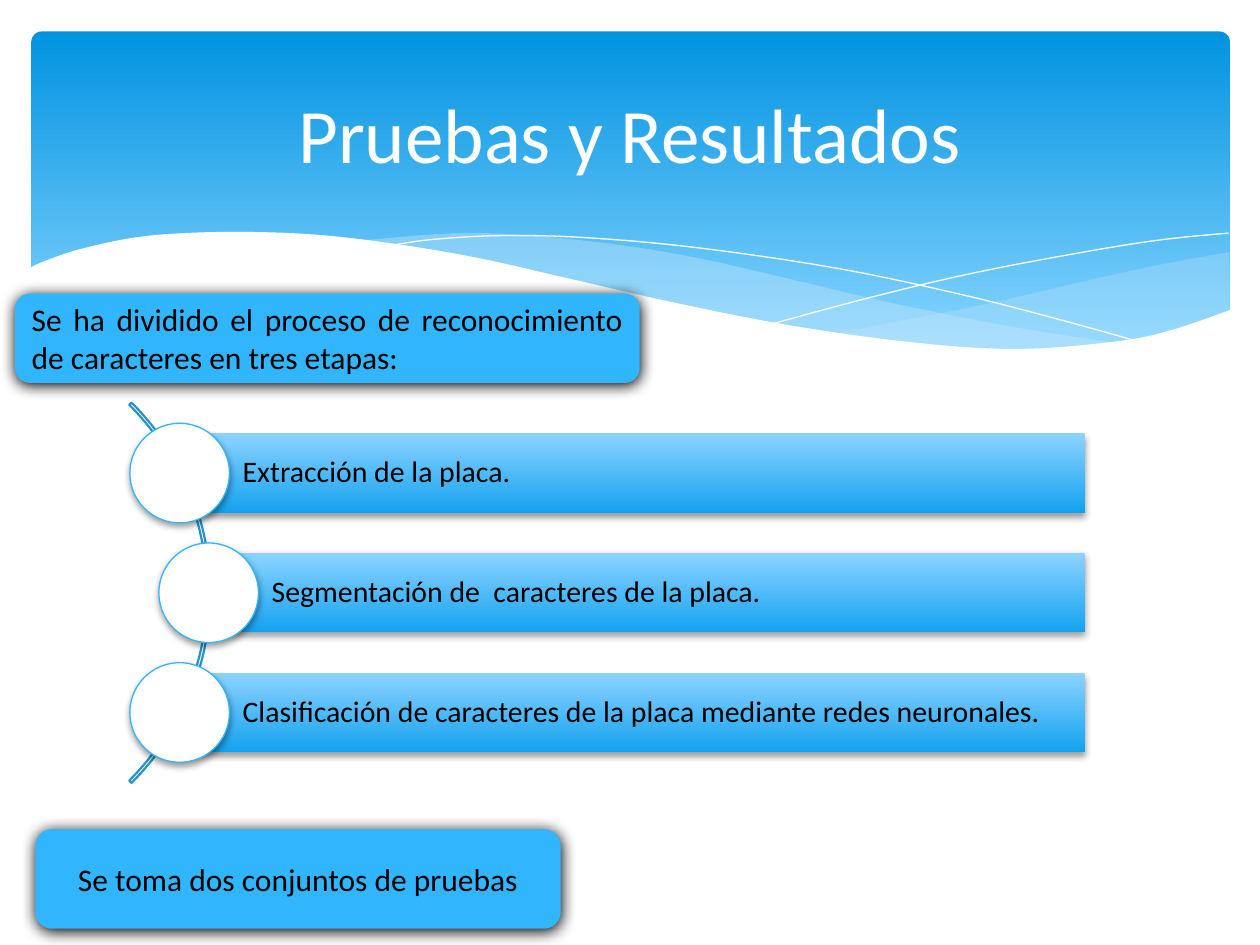
from collections import namedtuple

from lxml import etree
from pptx import Presentation
from pptx.dml.color import RGBColor
from pptx.enum import shapes, text
from pptx.oxml import ns
from pptx.util import Pt

Box = namedtuple("Box", "left top width height")

WHITE = RGBColor(0xFF, 0xFF, 0xFF)
BLACK = RGBColor(0, 0, 0)
SKY = RGBColor(0x31, 0xB6, 0xFD)
BANNER_DARK = RGBColor(0x02, 0x93, 0xE0)
BANNER_LIGHT = RGBColor(0x83, 0xD3, 0xFE)
BAR_LIGHT = RGBColor(0x8C, 0xD3, 0xFF)
BAR_DARK = RGBColor(0x14, 0xA2, 0xEF)
VEIL = RGBColor(0xC6, 0xE7, 0xFC)
ARC_BLUE = RGBColor(0x27, 0x92, 0xCB)

RIGHT_VEIL = [(684.7, 126), (645, 133.2), (602, 142.6), (543, 156.2), (458, 172.8),
              (489.6, 177), (527, 180.7), (560, 182.2), (597, 180.7), (633.6, 175.7),
              (660, 168.5), (684.7, 159.8)]
MIDDLE_VEIL = [(625, 178.6), (563, 169.2), (490, 154.8), (435, 141.8), (381.6, 129.6),
               (334, 121.7), (284.4, 116.6), (242, 115.2), (188, 119.5), (242.6, 128.2),
               (305.3, 141.8), (389.5, 160.6), (460.8, 173.5), (512, 180), (563, 182.2),
               (625, 178.6)]
FALLING_LINE = [(204.5, 122.4), (229.7, 118.8), (270.7, 116.6), (319.7, 118), (382.3, 123.8),
                (460.8, 135.4), (529.2, 149.8), (580.3, 162.7), (635, 177.8)]
RISING_LINE = [(423.4, 167), (482.4, 151.2), (540.7, 137.5), (605.5, 125.3),
               (647.3, 118.8), (684, 115.2)]
FRONT_WAVE = [(-1.5, 135.4), (8, 131), (30, 123.8), (67.7, 116.6), (121, 114.5),
              (177, 117.4), (244.8, 127.4), (303.8, 140.4), (363, 154), (432.7, 167.8),
              (504.7, 177.8), (564.5, 181.4), (620.6, 177), (651.6, 170.6), (685.4, 159)]


def smooth(knots, steps=5):
    """Return points of a Catmull-Rom curve through the knots."""
    ends = [knots[0], *knots, knots[-1]]
    points = [knots[0]]
    for a, b, c, d in zip(ends, ends[1:], ends[2:], ends[3:]):
        for step in range(1, steps + 1):
            t = step / steps
            points.append(tuple(
                (2 * q + (r - p) * t + (2 * p - 5 * q + 4 * r - s) * t ** 2
                 + (3 * q - p - 3 * r + s) * t ** 3) / 2
                for p, q, r, s in zip(a, b, c, d)))
    return points


def paint(shape, color=None, line=None, width=0.75):
    """Give a shape a plain fill and outline, without a shadow."""
    shape.shadow.inherit = False
    if color is None:
        shape.fill.background()
    else:
        shape.fill.solid()
        shape.fill.fore_color.rgb = color
    if line is None:
        shape.line.fill.background()
    else:
        shape.line.color.rgb = line
        shape.line.width = Pt(width)


def shade(shape, top, bottom, end=1.0):
    """Fill a shape with a gradient running downwards."""
    shape.fill.gradient()
    shape.fill.gradient_angle = 270
    for stop, color, position in zip(shape.fill.gradient_stops, (top, bottom), (0, end)):
        stop.color.rgb = color
        stop.position = position


def cast_shadow(shape, alpha, blur, distance):
    """Add a black shadow below a shape."""
    effects = shape._element.spPr.find(ns.qn("a:effectLst"))
    shadow = etree.SubElement(effects, ns.qn("a:outerShdw"), blurRad=str(Pt(blur)),
                              dist=str(Pt(distance)), dir="5400000", rotWithShape="0")
    color = etree.SubElement(shadow, ns.qn("a:srgbClr"), val=str(BLACK))
    etree.SubElement(color, ns.qn("a:alpha"), val=str(alpha * 1000))


def add_preset(page, kind, box):
    """Add a preset shape that fills the box."""
    return page.shapes.add_shape(kind, *map(Pt, box))


def write(shape, words, size, color, align):
    """Put one vertically centred paragraph into a shape."""
    frame = shape.text_frame
    frame.text = words
    frame.word_wrap = True
    frame.vertical_anchor = text.MSO_ANCHOR.MIDDLE
    para = frame.paragraphs[0]
    para.alignment = align
    font = para.runs[0].font
    font.name, font.size, font.color.rgb = "Calibri", Pt(size), color
    return para


def add_wave(page, box, points, color=None, alpha=100, line=None):
    """Draw a wave whose points are relative to the box."""
    places = [(Pt(box.left + x), Pt(box.top + y)) for x, y in points]
    builder = page.shapes.build_freeform(*places[0])
    builder.add_line_segments(places[1:], close=color is not None)
    wave = builder.convert_to_shape()
    paint(wave, color, line, 0)
    if alpha < 100:
        tint = wave._element.spPr.find(".//" + ns.qn("a:srgbClr"))
        etree.SubElement(tint, ns.qn("a:alpha"), val=str(alpha * 1000))


def add_banner(page, box, title):
    """Draw the gradient banner with its waves and title."""
    panel = add_preset(page, shapes.MSO_SHAPE.ROUNDED_RECTANGLE, box)
    panel.adjustments[0] = 0.03
    paint(panel)
    shade(panel, BANNER_DARK, BANNER_LIGHT, 0.9)
    add_wave(page, box, smooth(RIGHT_VEIL[:5]) + smooth(RIGHT_VEIL[4:]), VEIL, 29)
    add_wave(page, box, smooth(MIDDLE_VEIL[:9]) + smooth(MIDDLE_VEIL[8:]), VEIL, 40)
    for knots in (FALLING_LINE, RISING_LINE):
        add_wave(page, box, smooth(knots), line=WHITE)
    base = [(685.4, 219), (-1.5, 219)]
    add_wave(page, box, smooth(FRONT_WAVE) + base, WHITE)
    heading = page.shapes.add_textbox(Pt(box.left + 18), Pt(box.top + 8.6),
                                      Pt(box.width - 36.7), Pt(98.6))
    write(heading, title, 44, WHITE, text.PP_ALIGN.CENTER)


def add_stages(page, box, stages):
    """Draw the stages as bars with circles along an arc."""
    pitch, bar_height, circle, diameter = 68.4, 45.4, 56.9, 307.4
    middle = box.top + box.height / 2
    arc = add_preset(page, shapes.MSO_SHAPE.BLOCK_ARC,
                     Box(box.left - 261.4, middle - diameter / 2, diameter, diameter))
    for index, value in enumerate((189, 27, 0.006)):
        arc.adjustments[index] = value
    paint(arc, line=ARC_BLUE, width=1.25)
    for index, words in enumerate(stages):
        offset = index - (len(stages) - 1) / 2
        center = middle + offset * pitch
        left = box.left + circle / 2 + (0 if offset else 16.6)
        bar = add_preset(page, shapes.MSO_SHAPE.RECTANGLE,
                         Box(left, center - bar_height / 2,
                             box.left + box.width - left, bar_height))
        paint(bar)
        shade(bar, BAR_LIGHT, BAR_DARK)
        cast_shadow(bar, 38, 4, 2)
        para = write(bar, words, 17, BLACK, text.PP_ALIGN.LEFT)
        para.line_spacing = 0.9
        bar.text_frame.margin_left = Pt(36)
        bar.text_frame.margin_right = Pt(3.6)
        disc = add_preset(page, shapes.MSO_SHAPE.OVAL,
                          Box(left - circle / 2, center - circle / 2, circle, circle))
        paint(disc, WHITE, SKY)
        cast_shadow(disc, 38, 4, 2)


def add_note(page, box, words, align):
    """Draw a rounded note with a strong shadow."""
    note = add_preset(page, shapes.MSO_SHAPE.ROUNDED_RECTANGLE, box)
    paint(note, SKY)
    cast_shadow(note, 100, 8.5, 1)
    write(note, words, 18, BLACK, align)


def main():
    """Build the slide and save it."""
    deck = Presentation()
    deck.slide_width, deck.slide_height = Pt(720), Pt(540)
    page = deck.slides.add_slide(deck.slide_layouts[6])
    add_banner(page, Box(18, 18, 684.7, 194.4), "Pruebas y Resultados")
    add_stages(page, Box(74.2, 230, 545.7, 217.5), [
        "Extracción de la placa.",
        "Segmentación de  caracteres de la placa.",
        "Clasificación de caracteres de la placa mediante redes neuronales."])
    add_note(page, Box(8.6, 167.8, 357, 51),
             "Se ha dividido el proceso de reconocimiento de caracteres en tres etapas:",
             text.PP_ALIGN.JUSTIFY)
    add_note(page, Box(20.2, 473.8, 300.2, 56.9),
             "Se toma dos conjuntos de pruebas", text.PP_ALIGN.CENTER)
    deck.save("out.pptx")


if __name__ == "__main__":
    main()
